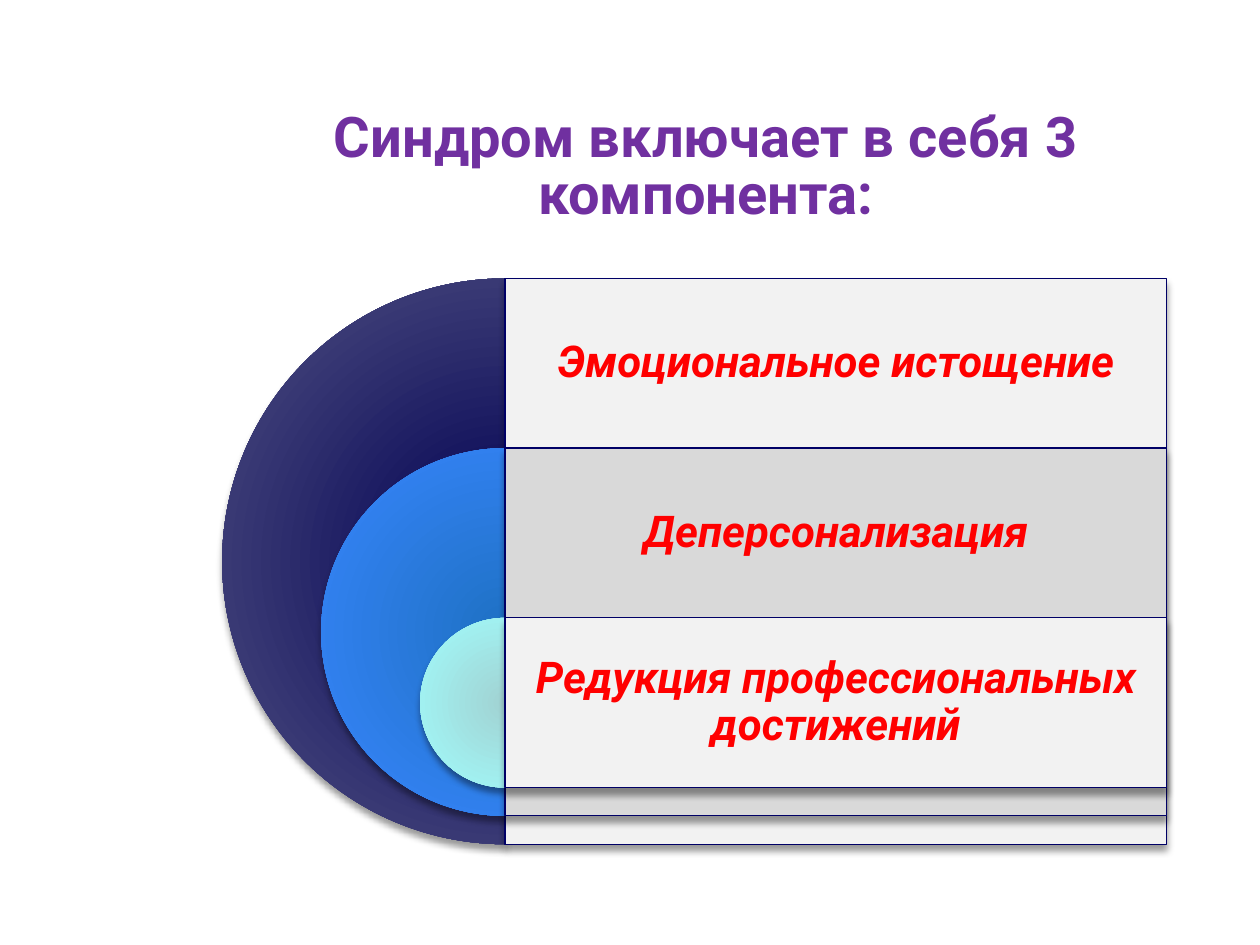
from pptx import Presentation
from pptx.dml.color import RGBColor
from pptx.enum.shapes import MSO_SHAPE
from pptx.enum.text import MSO_ANCHOR, PP_ALIGN
from pptx.oxml import parse_xml
from pptx.oxml.ns import nsdecls
from pptx.util import Pt

PURPLE = RGBColor(0x70, 0x30, 0xA0)
RED = RGBColor(0xFF, 0x00, 0x00)
NAVY = RGBColor(0x00, 0x00, 0x66)
LIGHT = RGBColor(0xF2, 0xF2, 0xF2)
GREY = RGBColor(0xD9, 0xD9, 0xD9)

TITLE = "Синдром включает в себя 3 компонента:"
# Text, panel colour, inner and outer colour of the half disc
COMPONENTS = [
    ("Эмоциональное истощение", LIGHT,
     RGBColor(0x00, 0x00, 0x50), RGBColor(0x51, 0x51, 0x84)),
    ("Деперсонализация", GREY,
     RGBColor(0x1E, 0x71, 0xC4), RGBColor(0x39, 0x86, 0xFF)),
    ("Редукция профессиональных достижений", LIGHT,
     RGBColor(0xA1, 0xD3, 0xD3), RGBColor(0xA1, 0xFC, 0xFC)),
]

TOP = 159.1
CENTRE_X = 288.6
PANEL_WIDTH = 378
DIAMETER = 323.3
ROW_HEIGHT = 0.3 * DIAMETER
DIAMETER_STEP = 0.35 * DIAMETER


def add_text(slide, text, box, *, size, color, italic=False, spacing=0.9,
             margin_y=7.2, anchor=MSO_ANCHOR.MIDDLE):
    frame = slide.shapes.add_textbox(*map(Pt, box)).text_frame
    frame.word_wrap = True
    frame.vertical_anchor = anchor
    frame.margin_left = frame.margin_right = Pt(7.2)
    frame.margin_top = frame.margin_bottom = Pt(margin_y)
    paragraph = frame.paragraphs[0]
    paragraph.alignment = PP_ALIGN.CENTER
    paragraph.line_spacing = spacing
    run = paragraph.add_run()
    run.text = text
    font = run.font
    font.name = "Roboto"
    font.size = Pt(size)
    font.bold = True
    font.italic = italic
    font.color.rgb = color


def add_shadowed(slide, preset, box):
    shape = slide.shapes.add_shape(preset, *map(Pt, box))
    shape.shadow.inherit = False
    shape._element.spPr[-1].append(parse_xml(
        f'<a:outerShdw {nsdecls("a")} blurRad="{Pt(4)}" dist="{Pt(3.4)}" '
        'dir="5400000" rotWithShape="0"><a:srgbClr val="000000">'
        '<a:alpha val="40000"/></a:srgbClr></a:outerShdw>'))
    return shape


def add_half_disc(slide, top, diameter, inner, outer):
    box = (CENTRE_X - diameter / 2, top, diameter, diameter)
    disc = add_shadowed(slide, MSO_SHAPE.PIE, box)
    disc.adjustments[0] = 54  # from 90 degrees
    disc.adjustments[1] = 162  # to 270 degrees
    disc.line.fill.background()
    gradient = parse_xml(
        f'<a:gradFill {nsdecls("a")} rotWithShape="1"><a:gsLst>'
        f'<a:gs pos="0"><a:srgbClr val="{inner}"/></a:gs>'
        f'<a:gs pos="100000"><a:srgbClr val="{outer}"/></a:gs></a:gsLst>'
        '<a:path path="circle"><a:fillToRect l="100000" t="100000" '
        'r="100000" b="100000"/></a:path></a:gradFill>')
    disc._element.spPr.insert(2, gradient)  # after position and geometry


def add_panel(slide, top, height, color):
    box = (CENTRE_X, top, PANEL_WIDTH, height)
    panel = add_shadowed(slide, MSO_SHAPE.RECTANGLE, box)
    panel.fill.solid()
    panel.fill.fore_color.rgb = color
    panel.line.color.rgb = NAVY
    panel.line.width = Pt(0.75)


def main():
    presentation = Presentation()
    presentation.slide_width = Pt(720)
    presentation.slide_height = Pt(540)
    slide = presentation.slides.add_slide(presentation.slide_layouts[6])

    add_text(slide, TITLE, (127.4, 60.5, 552.2, 73.4), size=32, color=PURPLE,
             spacing=0.85, margin_y=3.6, anchor=MSO_ANCHOR.TOP)
    for index, (text, panel_color, inner, outer) in enumerate(COMPONENTS):
        top = TOP + index * ROW_HEIGHT
        diameter = DIAMETER - index * DIAMETER_STEP
        add_half_disc(slide, top, diameter, inner, outer)
        add_panel(slide, top, diameter, panel_color)
        add_text(slide, text, (CENTRE_X, top, PANEL_WIDTH, ROW_HEIGHT),
                 size=25, color=RED, italic=True)

    presentation.save("out.pptx")


if __name__ == "__main__":
    main()
